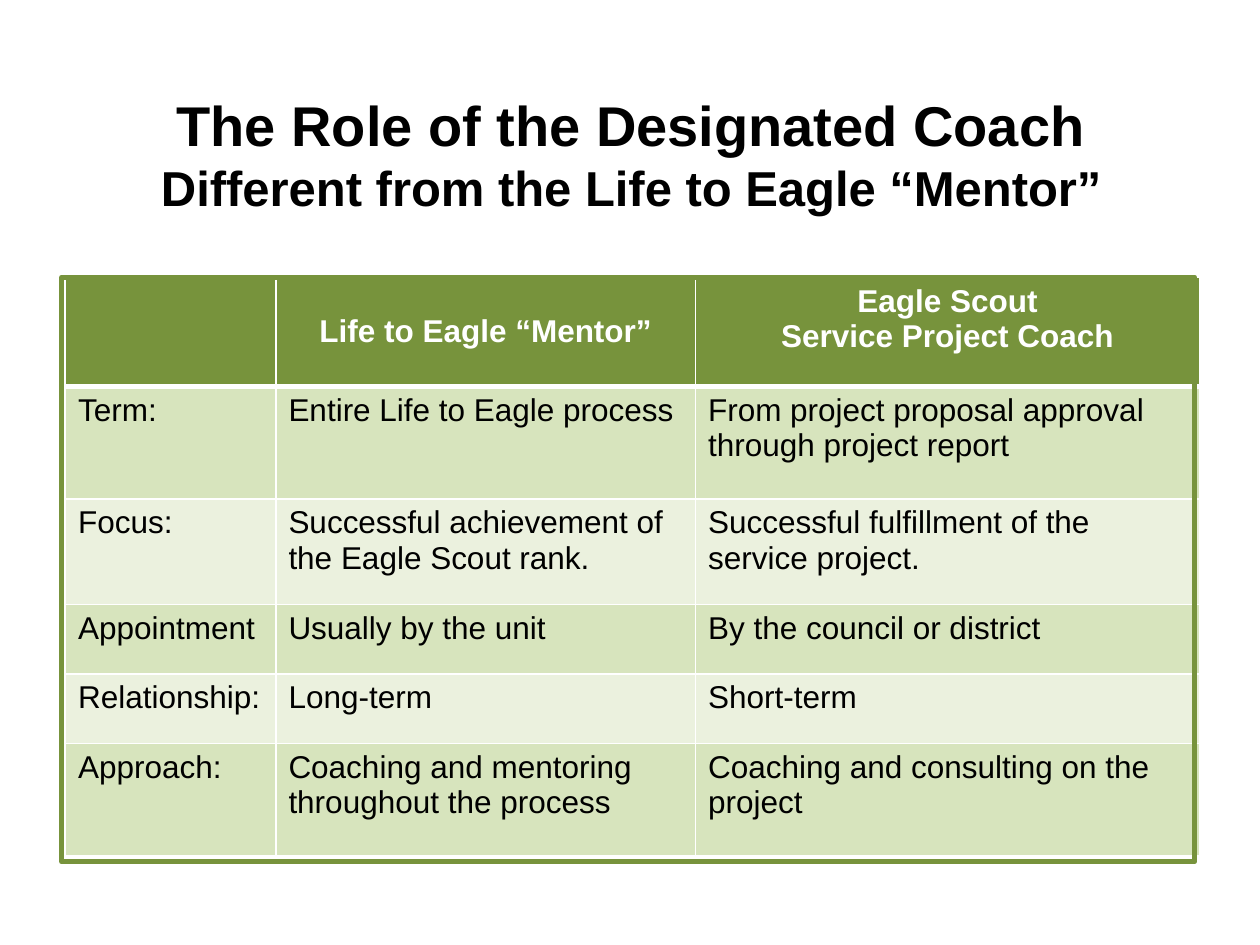
"""Build a slide comparing the Life to Eagle mentor with the project coach."""
from lxml import etree
from pptx import Presentation
from pptx.dml.color import RGBColor
from pptx.enum.shapes import MSO_SHAPE
from pptx.enum.text import MSO_ANCHOR, PP_ALIGN
from pptx.oxml.ns import qn
from pptx.util import Inches, Pt

CENTER, LEFT = PP_ALIGN.CENTER, PP_ALIGN.LEFT
MIDDLE, TOP = MSO_ANCHOR.MIDDLE, MSO_ANCHOR.TOP
RECTANGLE = MSO_SHAPE.RECTANGLE
BLACK = RGBColor(0x00, 0x00, 0x00)
WHITE = RGBColor(0xFF, 0xFF, 0xFF)
GREEN = RGBColor(0x77, 0x93, 0x3C)
BAND_DARK = RGBColor(0xD7, 0xE4, 0xBD)
BAND_LIGHT = RGBColor(0xEB, 0xF1, 0xDE)

COLUMN_WIDTHS = [1.67, 3.33, 4]
ROW_HEIGHTS = [0.87, 0.89, 0.84, 0.55, 0.55, 0.89]
ROWS = [
    ["", "Life to Eagle “Mentor”", "Eagle Scout\nService Project Coach"],
    ["Term:", "Entire Life to Eagle process",
     "From project proposal approval through project report"],
    ["Focus:", "Successful achievement of the Eagle Scout rank.",
     "Successful fulfillment of the service project."],
    ["Appointment", "Usually by the unit", "By the council or district"],
    ["Relationship:", "Long-term", "Short-term"],
    ["Approach:", "Coaching and mentoring throughout the process",
     "Coaching and consulting on the project"],
]


def write(frame, text, sizes=(18, 18), color=BLACK, bold=False, align=LEFT):
    """Write lines of text as one paragraph, with a size for each line."""
    para = frame.paragraphs[0]
    para.alignment = align
    for index, (line, size) in enumerate(zip(text.split("\n"), sizes)):
        if index:
            para.add_line_break()
        span = para.add_run()
        span.text = line
        span.font.name = "Arial"
        span.font.size = Pt(size)
        span.font.bold = bold
        span.font.color.rgb = color


def add_border(cell, side, points):
    """Draw a white border on one side of a table cell."""
    line = etree.SubElement(cell._tc.get_or_add_tcPr(), qn(f"a:ln{side}"), w=str(Pt(points)))
    fill = etree.SubElement(line, qn("a:solidFill"))
    etree.SubElement(fill, qn("a:srgbClr"), val=str(WHITE))


deck = Presentation()
deck.slide_width, deck.slide_height = Inches(10), Inches(7.5)
page = deck.slides.add_slide(deck.slide_layouts[5])

title = page.shapes.title
title.left, title.top = Inches(0.3), Inches(0.24)
title.width, title.height = Inches(9.42), Inches(1.95)
title.text_frame.word_wrap = True
title.text_frame.vertical_anchor = MIDDLE
write(title.text_frame,
      "The Role of the Designated Coach\nDifferent from the Life to Eagle “Mentor”",
      sizes=(32, 28), bold=True, align=CENTER)

table = page.shapes.add_table(
    len(ROWS), len(COLUMN_WIDTHS), Inches(0.52), Inches(2.2),
    Inches(sum(COLUMN_WIDTHS)), Inches(sum(ROW_HEIGHTS))).table
for column, width in zip(table.columns, COLUMN_WIDTHS):
    column.width = Inches(width)
for row, height in zip(table.rows, ROW_HEIGHTS):
    row.height = Inches(height)

for row_index, texts in enumerate(ROWS):
    header = row_index == 0
    band = BAND_DARK if row_index % 2 else BAND_LIGHT
    for column_index, text in enumerate(texts):
        cell = table.cell(row_index, column_index)
        add_border(cell, "L", 1)
        add_border(cell, "R", 1)
        add_border(cell, "T", 3 if row_index == 1 else 1)
        add_border(cell, "B", 3 if header else 1)
        cell.fill.solid()
        cell.fill.fore_color.rgb = GREEN if header else band
        cell.vertical_anchor = MIDDLE if header and column_index == 1 else TOP
        if text:
            write(cell.text_frame, text, color=WHITE if header else BLACK,
                  bold=header, align=CENTER if header else LEFT)

frame_box = page.shapes.add_shape(
    RECTANGLE, Inches(0.49), Inches(2.2), Inches(8.99), Inches(4.64))
frame_box.shadow.inherit = False
frame_box.fill.background()
frame_box.line.color.rgb = GREEN
frame_box.line.width = Pt(3)

deck.save("out.pptx")
